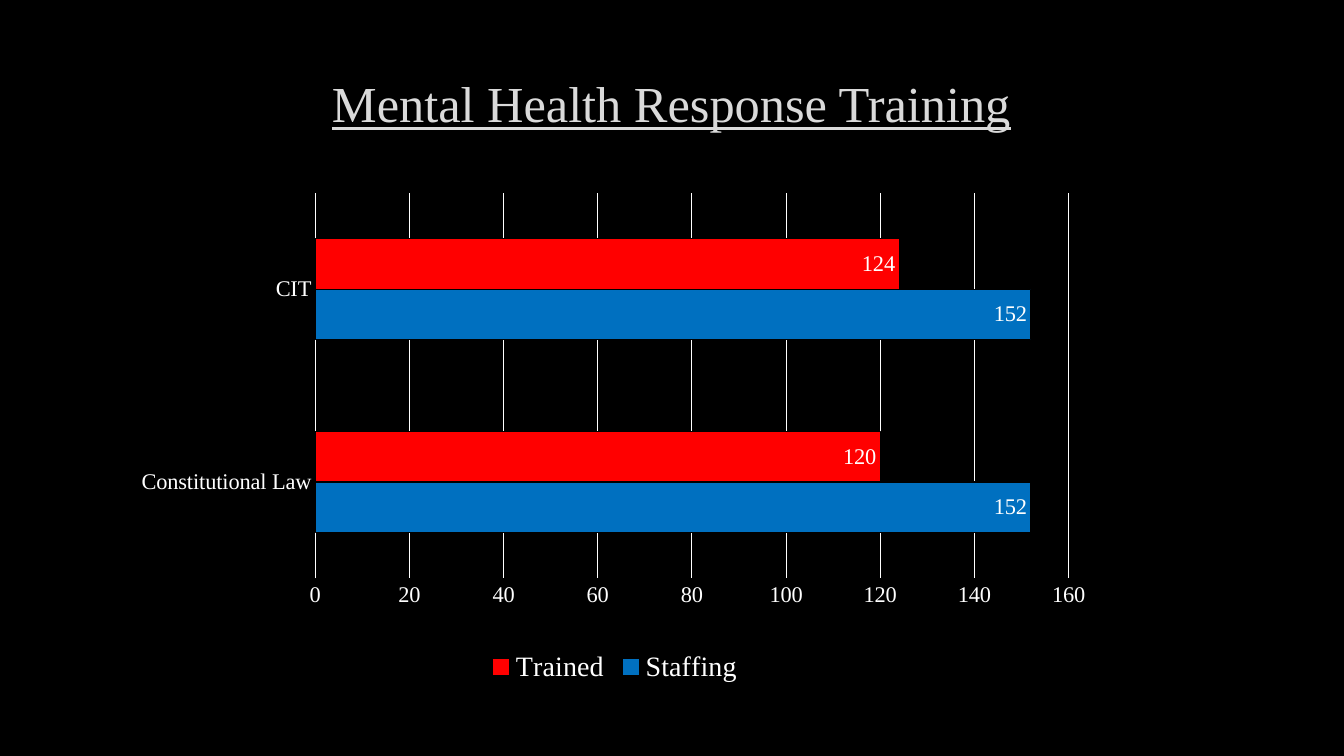
import pptx
import pptx.chart.data
import pptx.dml.color
import pptx.enum.chart
import pptx.enum.text
import pptx.oxml
import pptx.oxml.ns
import pptx.util

RGBColor = pptx.dml.color.RGBColor
Inches, Pt = pptx.util.Inches, pptx.util.Pt

BLACK = RGBColor(0x00, 0x00, 0x00)
WHITE = RGBColor(0xFF, 0xFF, 0xFF)
SILVER = RGBColor(0xDA, 0xDA, 0xDA)
BLUE = RGBColor(0x00, 0x70, 0xC0)
RED = RGBColor(0xFF, 0x00, 0x00)
SERIF = "Times New Roman"

TRAININGS = ["Constitutional Law", "CIT"]
OFFICERS = [("Staffing", [152, 152], BLUE), ("Trained", [120, 124], RED)]
PLOT_SHARES = {"x": 0.196, "y": 0, "w": 0.764, "h": 0.778}


def style_font(font, size, color):
    font.name = SERIF
    font.size = Pt(size)
    font.color.rgb = color


def style_line(line, color):
    line.color.rgb = color
    line.width = Pt(0.75)


def add_title(slide, box):
    frame = slide.shapes.add_textbox(*map(Inches, box)).text_frame
    frame.word_wrap = True
    frame.vertical_anchor = pptx.enum.text.MSO_ANCHOR.TOP
    heading = frame.paragraphs[0]
    heading.text = "Mental Health Response Training"
    heading.alignment = pptx.enum.text.PP_ALIGN.CENTER
    style_font(heading.runs[0].font, 36, SILVER)
    heading.runs[0].font.underline = True


def fix_plot_area(chart, shares):
    """Place the inner plot area at shares of the chart's box."""
    plot_area = chart.element.chart.plotArea
    for old in plot_area.findall(pptx.oxml.ns.qn("c:layout")):
        plot_area.remove(old)
    modes = '<c:xMode val="edge"/><c:yMode val="edge"/>'
    sizes = "".join(f'<c:{key} val="{share}"/>' for key, share in shares.items())
    plot_area.insert(0, pptx.oxml.parse_xml(
        f'<c:layout {pptx.oxml.ns.nsdecls("c")}><c:manualLayout>'
        f'<c:layoutTarget val="inner"/>{modes}{sizes}'
        '</c:manualLayout></c:layout>'))


def style_axes(chart):
    for axis in (chart.category_axis, chart.value_axis):
        axis.major_tick_mark = pptx.enum.chart.XL_TICK_MARK.NONE
        axis.minor_tick_mark = pptx.enum.chart.XL_TICK_MARK.NONE
        style_font(axis.tick_labels.font, 16, WHITE)
    style_line(chart.category_axis.format.line, WHITE)
    scale = chart.value_axis
    scale.minimum_scale, scale.maximum_scale, scale.major_unit = 0, 160, 20
    scale.format.line.fill.background()
    style_line(scale.major_gridlines.format.line, WHITE)


def style_bars(plot):
    plot.vary_by_categories = False
    plot.gap_width = 182
    plot.overlap = 0
    for bars, (_, _, color) in zip(plot.series, OFFICERS):
        bars.format.fill.solid()
        bars.format.fill.fore_color.rgb = color
        style_line(bars.format.line, BLACK)
        labels = bars.data_labels
        labels.show_value = True
        labels.position = pptx.enum.chart.XL_LABEL_POSITION.INSIDE_END
        style_font(labels.font, 16, WHITE)


def add_training_chart(slide, box):
    staffing = pptx.chart.data.CategoryChartData()
    staffing.categories = TRAININGS
    for name, counts, _ in OFFICERS:
        staffing.add_series(name, counts)
    chart = slide.shapes.add_chart(
        pptx.enum.chart.XL_CHART_TYPE.BAR_CLUSTERED,
        *map(Inches, box), staffing).chart
    chart.has_title = False
    style_font(chart.font, 16, WHITE)
    chart.has_legend = True
    chart.legend.position = pptx.enum.chart.XL_LEGEND_POSITION.BOTTOM
    chart.legend.include_in_layout = False
    style_font(chart.legend.font, 20, WHITE)
    style_axes(chart)
    style_bars(chart.plots[0])
    fix_plot_area(chart, PLOT_SHARES)


def main():
    deck = pptx.Presentation()
    deck.slide_width, deck.slide_height = Inches(13.33), Inches(7.5)
    slide = deck.slides.add_slide(deck.slide_layouts[6])
    slide.background.fill.solid()
    slide.background.fill.fore_color.rgb = BLACK
    add_title(slide, (1, 0.67, 11.32, 1.06))
    add_training_chart(slide, (1.21, 1.91, 9.78, 4.92))
    deck.save("out.pptx")


if __name__ == "__main__":
    main()
